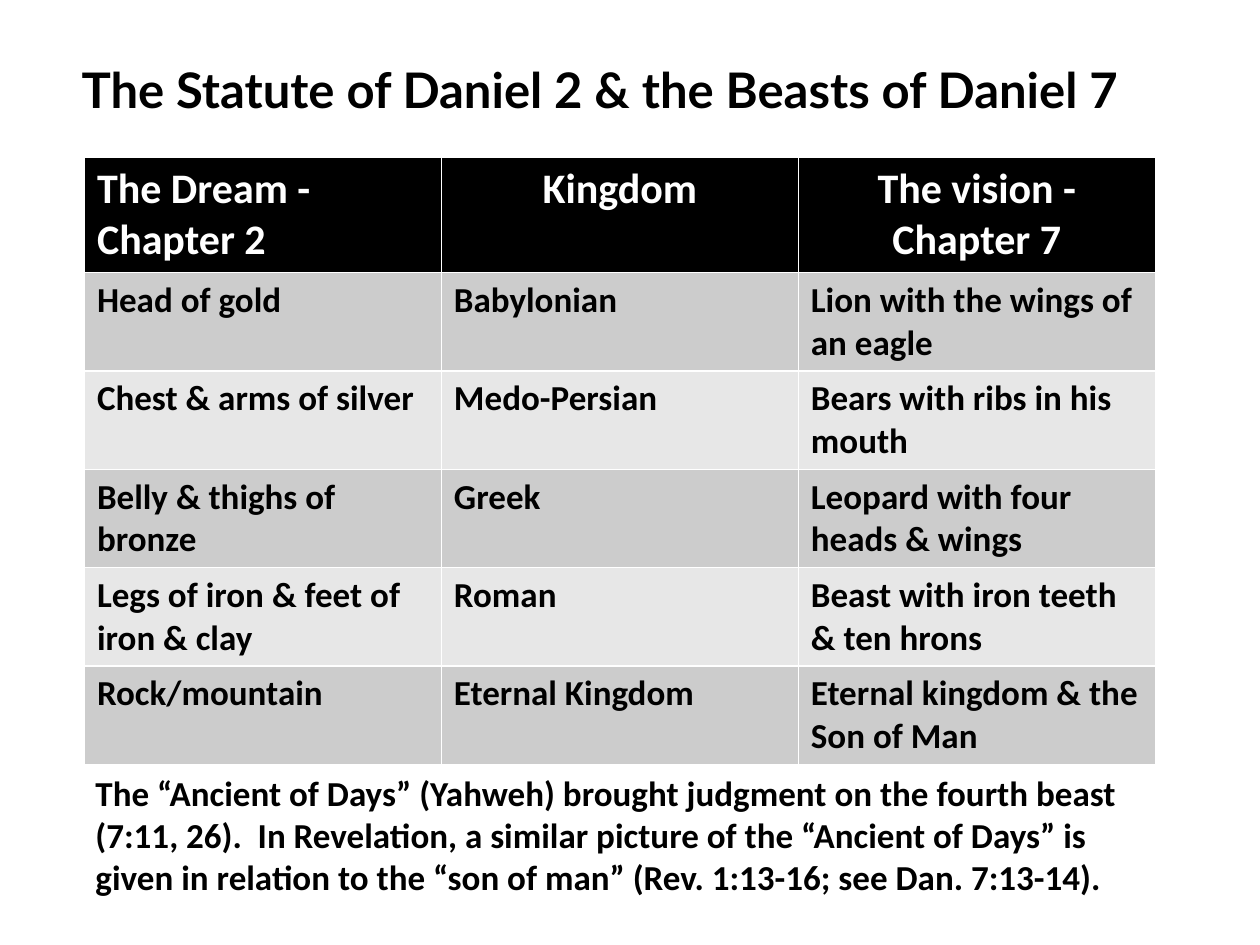
from pptx import Presentation
from pptx.dml.color import RGBColor
from pptx.enum.text import MSO_AUTO_SIZE, PP_ALIGN
from pptx.util import Inches, Pt

COLORS = {"ink": "000000", "paper": "FFFFFF", "odd": "CCCCCC", "even": "E7E7E7"}
HEADINGS = ["The Dream - Chapter 2", "Kingdom", "The vision - Chapter 7"]
KINGDOMS = [
    ("Head of gold", "Babylonian", "Lion with the wings of an eagle"),
    ("Chest & arms of silver", "Medo-Persian", "Bears with ribs in his mouth"),
    ("Belly & thighs of bronze", "Greek", "Leopard with four heads & wings"),
    ("Legs of iron & feet of iron & clay", "Roman", "Beast with iron teeth & ten hrons"),
    ("Rock/mountain", "Eternal Kingdom", "Eternal kingdom & the Son of Man"),
]
TITLE = "The Statute of Daniel 2 & the Beasts of Daniel 7"
CLOSING = (
    "The “Ancient of Days” (Yahweh) brought judgment on the fourth beast (7:11, 26).  "
    "In Revelation, a similar picture of the “Ancient of Days” is given in relation "
    "to the “son of man” (Rev. 1:13-16; see Dan. 7:13-14)."
)
HEADER_SHARE = 0.9 / 4.8


def write(frame, words, size, color="ink", font="Calibri", align=PP_ALIGN.LEFT):
    frame.text = words
    paragraph = frame.paragraphs[0]
    paragraph.alignment = align
    style = paragraph.runs[0].font
    style.name, style.size, style.bold = font, Pt(size), True
    style.color.rgb = RGBColor.from_string(COLORS[color])


def add_words(slide, box, words, size, font="Calibri", wrap=True):
    frame = slide.shapes.add_textbox(*map(Inches, box)).text_frame
    frame.word_wrap = wrap
    frame.auto_size = MSO_AUTO_SIZE.SHAPE_TO_FIT_TEXT
    write(frame, words, size, font=font)


def fill_cell(cell, color):
    cell.fill.solid()
    cell.fill.fore_color.rgb = RGBColor.from_string(COLORS[color])


def add_comparison(slide, box):
    left, top, width, height = map(Inches, box)
    count = len(KINGDOMS)
    table = slide.shapes.add_table(
        count + 1, len(HEADINGS), left, top, width, height
    ).table
    header_height = int(height * HEADER_SHARE)
    for index, row in enumerate(table.rows):
        row.height = (height - header_height) // count if index else header_height
    for column, heading in enumerate(HEADINGS):
        cell = table.cell(0, column)
        align = PP_ALIGN.CENTER if column else PP_ALIGN.LEFT
        write(cell.text_frame, heading, 24, "paper", align=align)
        fill_cell(cell, "ink")
    for row, kingdom in enumerate(KINGDOMS, 1):
        for column, words in enumerate(kingdom):
            cell = table.cell(row, column)
            write(cell.text_frame, words, 20)
            fill_cell(cell, "odd" if row % 2 else "even")


def main():
    deck = Presentation()
    deck.slide_width, deck.slide_height = Inches(10), Inches(7.5)
    slide = deck.slides.add_slide(deck.slide_layouts[6])
    add_comparison(slide, (0.67, 1.25, 8.5, 4.8))
    add_words(slide, (0.55, 0.42, 8.73, 0.57), TITLE, 28, font="Lato", wrap=False)
    add_words(slide, (0.66, 6.07, 8.5, 1.45), CLOSING, 20)
    deck.save("out.pptx")


if __name__ == "__main__":
    main()
